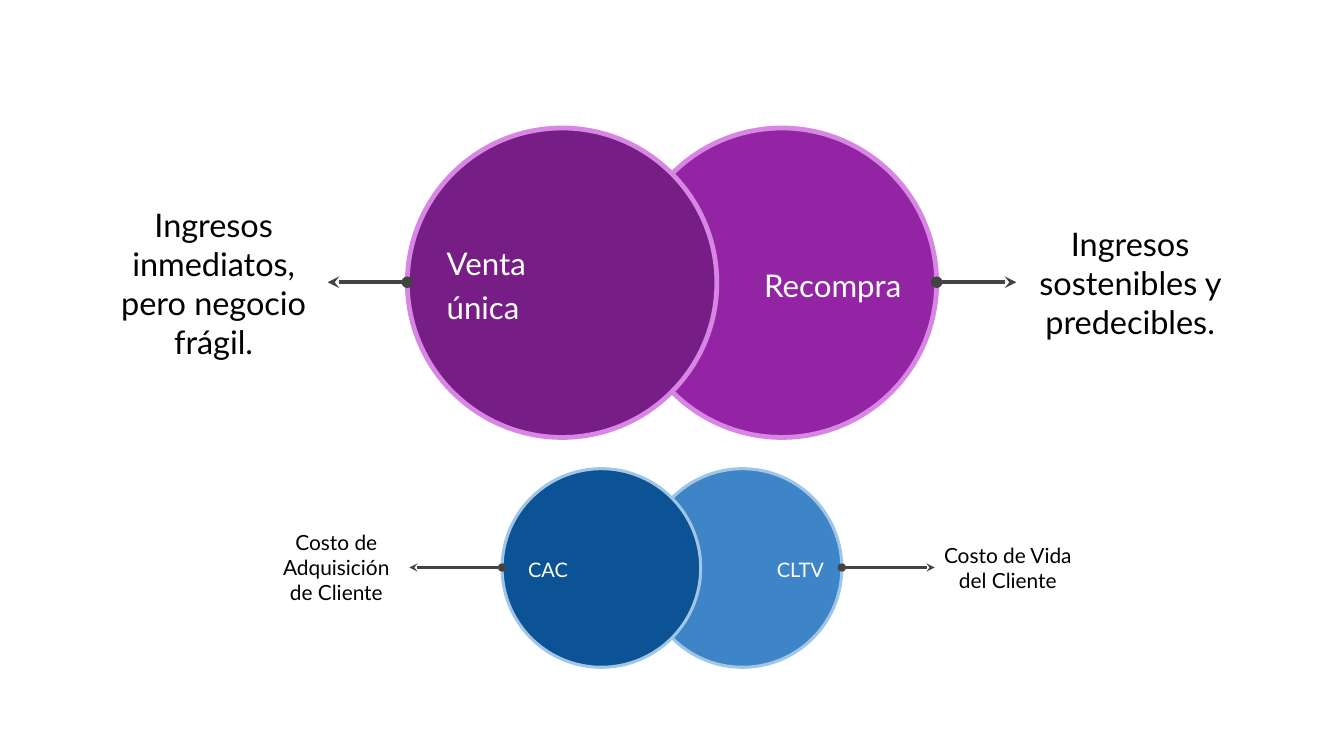
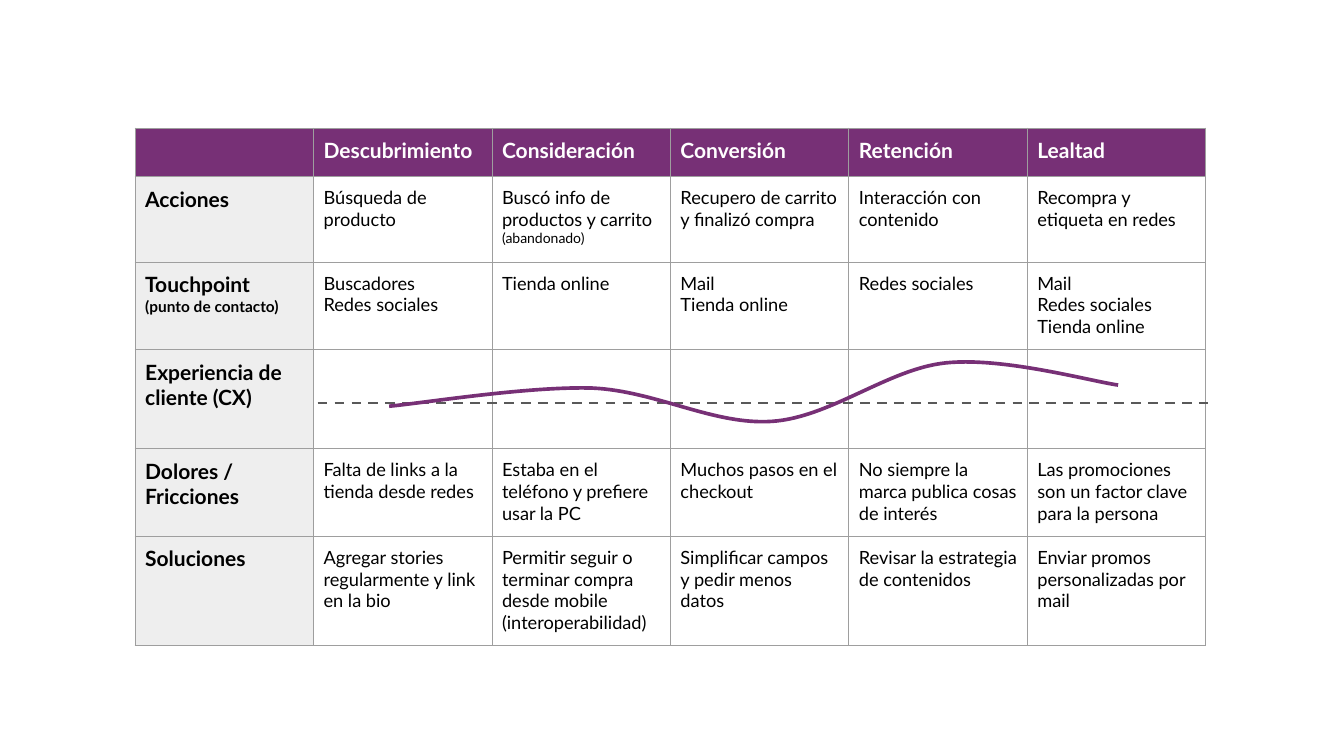
import pptx
import pptx.util
import pptx.dml.color
import pptx.enum.dml
import pptx.enum.shapes
import pptx.enum.text
import pptx.oxml
import pptx.oxml.ns
import lxml.etree

PX = 9144  # one px is a hundredth of an inch
FONT = "Lato"
WHITE, BLACK, GREY = "FFFFFF", "000000", "EEEEEE"
PLUM, EDGE, ARROW, DASH = "773076", "9E9E9E", "434343", "595959"
LEFT, MID, RIGHT = (pptx.enum.text.PP_ALIGN.LEFT, pptx.enum.text.PP_ALIGN.CENTER,
                    pptx.enum.text.PP_ALIGN.RIGHT)
STRAIGHT = pptx.enum.shapes.MSO_CONNECTOR.STRAIGHT
OVAL = pptx.enum.shapes.MSO_SHAPE.OVAL
qn = pptx.oxml.ns.qn


def rgb(code):
    return pptx.dml.color.RGBColor.from_string(code)


def write(frame, text, size, color=BLACK, bold=False, align=LEFT, space=1.0, small=10):
    """Each line is a paragraph; what follows a bar is set in the small size."""
    frame.word_wrap = True
    for n, line in enumerate(text.split("\n")):
        para = frame.add_paragraph() if n else frame.paragraphs[0]
        para.alignment, para.line_spacing = align, space
        for part, points in zip(line.split("|"), (size, small)):
            if part:
                run = para.add_run()
                run.text = part
                run.font.name, run.font.size = FONT, pptx.util.Pt(points)
                run.font.bold, run.font.color.rgb = bold, rgb(color)
        if not line:
            lxml.etree.SubElement(para._p, qn("a:endParaRPr"), sz=str(size * 100))


deck = pptx.Presentation()
deck.slide_width, deck.slide_height = 1333 * PX, 750 * PX
blank = deck.slide_layouts[6]

# Slide 1: two pairs of overlapping circles
slide = deck.slides.add_slide(blank)
pairs = [
    dict(top=127, size=307, rim="D786E4", rim_pt=3.41, reach=79, arrow_pt=2.79,
         label=(178, 86, 15, 22.3), note=(226, 175, 9, 23.2),
         sides=[(622, "9325A5", "Recompra", 731, "Ingresos sostenibles y predecibles.", 1008),
                (404, "771E86", "Venta única", 428,
                 "Ingresos inmediatos, pero negocio frágil.", 99)]),
    dict(top=465, size=197, rim="9FC5E8", rim_pt=2.19, reach=92, arrow_pt=1.79,
         label=(114, 55, 10, 14.3), note=(145, 112, 6, 14.9),
         sides=[(638, "3D85C6", "CLTV", 713, "Costo de Vida del Cliente", 927),
                (498, "0B5394", "CAC", 514, "Costo de Adquisición\nde Cliente", 261)]),
]
for pair in pairs:
    size = pair["size"]
    axis = pair["top"] + size // 2
    for side, (left, fill, label, label_x, note, note_x) in zip((1, -1), pair["sides"]):
        disc = slide.shapes.add_shape(OVAL, left * PX, pair["top"] * PX, size * PX, size * PX)
        disc.shadow.inherit = False
        disc.fill.solid()
        disc.fill.fore_color.rgb = rgb(fill)
        disc.line.color.rgb = rgb(pair["rim"])
        disc.line.width = pptx.util.Pt(pair["rim_pt"])

        # Label inside the circle and note beside it
        inner = dict(color=WHITE, align=RIGHT if side > 0 else LEFT, space=1.15)
        for text, x, box, style in ((label, label_x, pair["label"], inner),
                                    (note, note_x, pair["note"], dict(align=MID))):
            wide, high, pad, points = box
            frame = slide.shapes.add_textbox(
                x * PX, (axis - high // 2) * PX, wide * PX, high * PX).text_frame
            frame.margin_left = frame.margin_right = pad * PX
            frame.margin_top = frame.margin_bottom = pad * PX
            frame.vertical_anchor = pptx.enum.text.MSO_ANCHOR.MIDDLE
            write(frame, text, points, **style)

        # Arrow from the rim out to the note
        start = left + size if side > 0 else left
        arrow = slide.shapes.add_connector(
            STRAIGHT, start * PX, axis * PX, (start + side * pair["reach"]) * PX, axis * PX)
        arrow.line.color.rgb = rgb(ARROW)
        arrow.line.width = pptx.util.Pt(pair["arrow_pt"])
        for end, kind in (("a:headEnd", "oval"), ("a:tailEnd", "stealth")):
            lxml.etree.SubElement(arrow.line._ln, qn(end), type=kind)

# Slide 2: customer journey table
slide = deck.slides.add_slide(blank)
rows = [
    (48, ["", "Descubrimiento", "Consideración", "Conversión", "Retención", "Lealtad"]),
    (85, ["Acciones", "Búsqueda de producto", "Buscó info de productos y carrito |(abandonado)",
          "Recupero de carrito y finalizó compra", "Interacción con contenido",
          "Recompra y etiqueta en redes"]),
    (87, ["Touchpoint\n|(punto de contacto)", "Buscadores\nRedes sociales", "Tienda online",
          "Mail\nTienda online", "Redes sociales", "Mail\nRedes sociales\nTienda online"]),
    (98, ["Experiencia de cliente (CX)", "", "", "", "", ""]),
    (87, ["Dolores / Fricciones", "Falta de links a la tienda desde redes",
          "Estaba en el teléfono y prefiere usar la PC", "Muchos pasos en el checkout",
          "No siempre la marca publica cosas de interés",
          "Las promociones son un factor clave para la persona"]),
    (108, ["Soluciones", "Agregar stories regularmente y link en la bio",
           "Permitir seguir o terminar compra desde mobile (interoperabilidad)",
           "Simplificar campos y pedir menos datos", "Revisar la estrategia de contenidos",
           "Enviar promos personalizadas por mail"]),
]
count, wide = len(rows[0][1]), 177
high = sum(row[0] for row in rows)
grid = slide.shapes.add_table(
    len(rows), count, 134 * PX, 127 * PX, count * wide * PX, high * PX).table
grid.first_row = grid.horz_banding = False
for col in grid.columns:
    col.width = wide * PX
for r, (tall, texts) in enumerate(rows):
    grid.rows[r].height = tall * PX
    for c, text in enumerate(texts):
        cell = grid.cell(r, c)
        cell.margin_left = cell.margin_right = 10 * PX
        cell.margin_top = cell.margin_bottom = 10 * PX
        for edge in ("a:lnL", "a:lnR", "a:lnT", "a:lnB"):
            line = lxml.etree.SubElement(cell._tc.get_or_add_tcPr(), qn(edge), w="9525")
            paint = lxml.etree.SubElement(line, qn("a:solidFill"))
            lxml.etree.SubElement(paint, qn("a:srgbClr"), val=EDGE)
        head = r == 0 or c == 0
        if head:
            cell.fill.solid()
            cell.fill.fore_color.rgb = rgb(GREY if r else PLUM)
        else:
            cell.fill.background()
        write(cell.text_frame, text, 15 if head else 13, color=BLACK if r else WHITE,
              bold=head, small=11 if head else 10)

# Neutral line of the experience row
base = slide.shapes.add_connector(STRAIGHT, 315 * PX, 400 * PX, 1198 * PX, 400 * PX)
base.line.color.rgb = rgb(DASH)
base.line.width = pptx.util.Pt(1.73)
base.line.dash_style = pptx.enum.dml.MSO_LINE.DASH

# Experience curve: each three points after the first make one Bezier segment
points = [(386, 403), (419, 400), (524, 383), (588, 385), (651, 388), (708, 422), (766, 418),
          (824, 414), (881, 366), (938, 360), (995, 354), (1081, 378), (1109, 382)]
build = slide.shapes.build_freeform(*points[0], scale=PX)
build.add_line_segments(points[1:], close=False)
curve = build.convert_to_shape()
curve.shadow.inherit = False
curve.fill.background()
curve.line.color.rgb = rgb(PLUM)
curve.line.width = pptx.util.Pt(2.6)
trace = next(curve._element.iter(qn("a:path")))
steps = trace.findall(qn("a:lnTo"))
for n, step in enumerate(steps):
    if n % 3 == 0:
        bend = lxml.etree.SubElement(trace, qn("a:cubicBezTo"))
    bend.append(step[0])
    trace.remove(step)

# Connectors carry no shadow
for slide in deck.slides:
    for line in slide.element.iter(qn("p:cxnSp")):
        lxml.etree.SubElement(line.spPr, qn("a:effectLst"))

deck.save("out.pptx")
